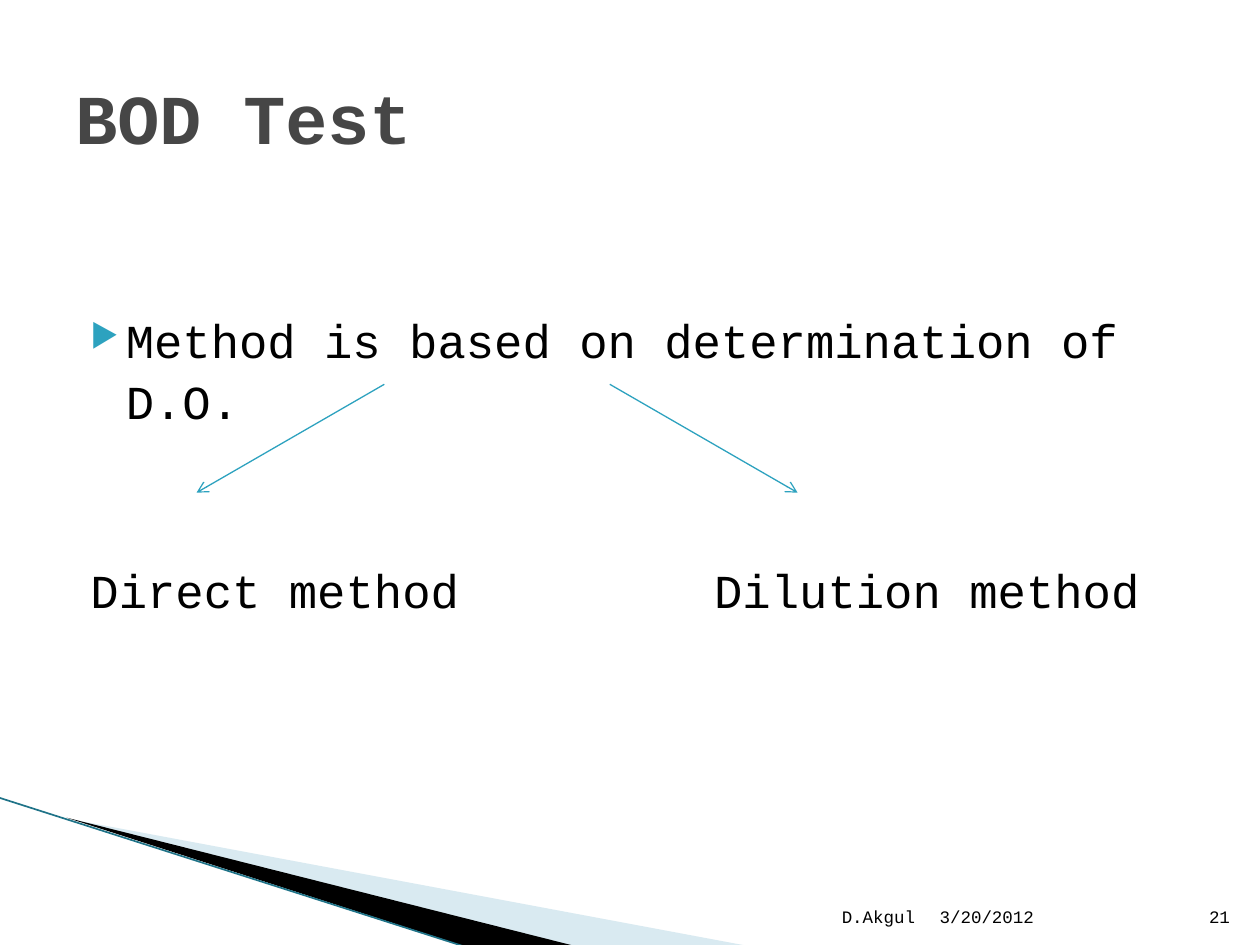
import pptx
import pptx.dml.color
import pptx.enum.text
import pptx.oxml
import pptx.oxml.ns
import pptx.util
from pptx.util import Inches

FONT = "Courier New"
ACCENT = "2DA2BF"
ANCHOR = pptx.enum.text.MSO_ANCHOR
ALIGN = pptx.enum.text.PP_ALIGN


def color(value):
    return pptx.dml.color.RGBColor.from_string(value)


def add_child(parent, tag, **attributes):
    child = pptx.oxml.parse_xml(f"<a:{tag} {pptx.oxml.ns.nsdecls('a')}/>")
    for name, value in attributes.items():
        child.set(name, str(value))
    parent.append(child)
    return child


def add_bullet(paragraph, hanging):
    properties = paragraph._p.get_or_add_pPr()
    properties.set("marL", str(Inches(0.4)))
    properties.set("indent", str(-Inches(hanging)))
    add_child(add_child(properties, "buClr"), "srgbClr", val=ACCENT)
    add_child(properties, "buSzPct", val=68000)
    add_child(properties, "buChar", char="▶")


def add_text(slide, text, left, top, width, height, *, size, fill="000000",
             bold=False, align=ALIGN.LEFT, anchor=ANCHOR.TOP, spacing=None,
             bullet=False):
    box = slide.shapes.add_textbox(Inches(left), Inches(top), Inches(width), Inches(height))
    frame = box.text_frame
    frame.word_wrap = True
    frame.vertical_anchor = anchor
    paragraph = frame.paragraphs[0]
    paragraph.alignment = align
    if spacing:
        paragraph.line_spacing = spacing
    if bullet:
        add_bullet(paragraph, 0.28)
    run = paragraph.add_run()
    run.text = text
    run.font.name = FONT
    run.font.size = pptx.util.Pt(size)
    run.font.bold = bold
    run.font.color.rgb = color(fill)


def add_wedge(slide, points, fill, opacity=100):
    start, *rest = [(Inches(x), Inches(y)) for x, y in points]
    builder = slide.shapes.build_freeform(*start, scale=1.0)
    builder.add_line_segments(rest, close=True)
    shape = builder.convert_to_shape()
    shape.shadow.inherit = False
    shape.fill.solid()
    shape.fill.fore_color.rgb = color(fill)
    shape.line.fill.background()
    if opacity < 100:
        solid = shape._element.spPr.find(pptx.oxml.ns.qn("a:solidFill"))
        add_child(solid[0], "alpha", val=opacity * 1000)


def add_line(slide, start, end, stroke, width, arrow=False):
    line = slide.shapes.add_connector(
        pptx.enum.shapes.MSO_CONNECTOR.STRAIGHT,
        *(Inches(value) for value in (*start, *end)))
    line.line.color.rgb = color(stroke)
    line.line.width = pptx.util.Pt(width)
    if arrow:
        add_child(line.line._get_or_add_ln(), "tailEnd", type="arrow")
    add_child(line._element.spPr, "effectLst")


def main():
    presentation = pptx.Presentation()
    presentation.slide_width = Inches(10)
    presentation.slide_height = Inches(7.5)
    slide = presentation.slides.add_slide(presentation.slide_layouts[6])

    # Corner decoration
    add_wedge(slide, [(0.55, 6.5), (5.95, 7.51), (4.56, 7.51)], "A0CBDC", opacity=40)
    add_wedge(slide, [(0.53, 6.49), (4.57, 7.51), (3.72, 7.52)], "000000")
    add_line(slide, (-0.01, 6.33), (3.71, 7.52), "1F7388", 0.95)

    # Title and statement
    add_text(slide, "BOD Test", 0.5, 0.3, 9, 1.25, size=40, fill="464646",
             bold=True, anchor=ANCHOR.MIDDLE)
    add_text(slide, "Method is based on determination of D.O.", 0.5, 2.39, 9, 1,
             size=27, spacing=1.07, bullet=True)

    # The two methods
    for label, left in (("Direct method", 0.62), ("Dilution method", 5.57)):
        add_text(slide, label, left, 4.37, 3.8, 0.55, size=27, spacing=1.07)

    # Arrows to the methods
    for start_x, end_x in ((3.05, 1.56), (4.84, 6.33)):
        add_line(slide, (start_x, 3.05), (end_x, 3.91), ACCENT, 0.75, arrow=True)

    # Footer
    for text, left, width, align in (("3/20/2012", 7.36, 2.1, ALIGN.LEFT),
                                     ("D.Akgul", 4.79, 2.57, ALIGN.RIGHT),
                                     ("21", 9.26, 0.6, ALIGN.RIGHT)):
        add_text(slide, text, left, 7.01, width, 0.4, size=10, align=align,
                 anchor=ANCHOR.BOTTOM)

    presentation.save("out.pptx")


if __name__ == "__main__":
    main()
